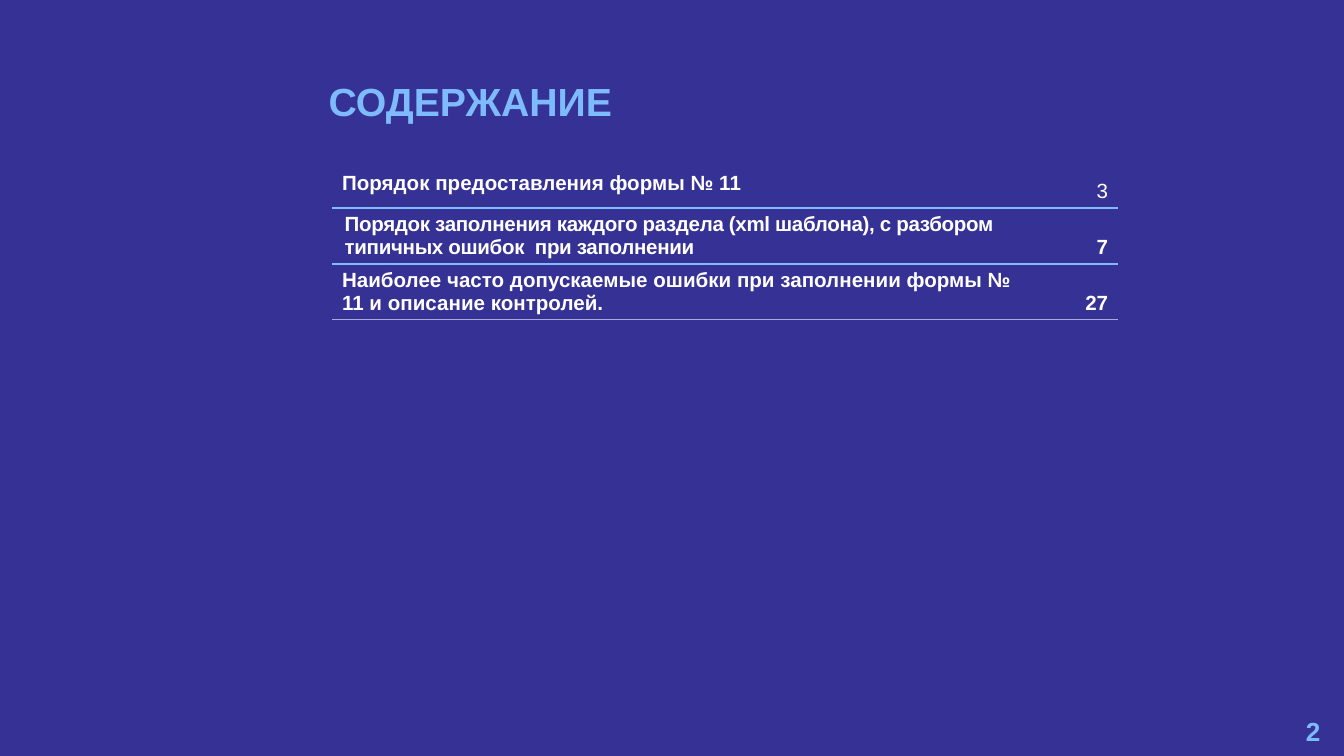
from lxml.etree import SubElement
from pptx import Presentation
from pptx.dml.color import RGBColor
from pptx.enum.text import MSO_ANCHOR, MSO_AUTO_SIZE, PP_ALIGN
from pptx.oxml.ns import qn
from pptx.util import Inches, Pt

COLORS = {"background": "363194", "accent": "7DBBFC", "text": "FFFFFF", "last_rule": "ABA8DA"}
WIDTH = Inches(10)
HEIGHT = WIDTH * 9 // 16
COLUMN, ROW = WIDTH / 100, HEIGHT / 56.25
INSET_X, INSET_Y = Pt(5.4), Pt(2.7)
CONTENTS = [
    ("Порядок предоставления формы № 11", "3"),
    ("Порядок заполнения каждого раздела (xml шаблона), с разбором типичных ошибок  при заполнении", "7"),
    ("Наиболее часто допускаемые ошибки при заполнении формы № 11 и описание контролей.", "27"),
]
COLUMN_SHARES = (0.91, 0.09)
ROW_SHARES = (0.27, 0.365, 0.365)


def grid_box(left, top, width, height):
    return int(left * COLUMN), int(top * ROW), int(width * COLUMN), int(height * ROW)


def set_insets(target):
    target.margin_left = target.margin_right = INSET_X
    target.margin_top = target.margin_bottom = INSET_Y


def add_run(paragraph, text, size, color, bold=True):
    run = paragraph.add_run()
    run.text = text
    run.font.name = "Arial"
    run.font.size = Pt(size)
    run.font.bold = bold
    run.font.color.rgb = RGBColor.from_string(COLORS[color])
    return run


def fill_text_shape(shape, text, size, align, anchor):
    frame = shape.text_frame
    frame.word_wrap = True
    frame.auto_size = MSO_AUTO_SIZE.NONE
    frame.vertical_anchor = anchor
    set_insets(frame)
    paragraph = frame.paragraphs[0]
    paragraph.alignment = align
    add_run(paragraph, text, size, "accent")
    return paragraph


def place_title(slide, box):
    title = slide.shapes.title
    title.left, title.top, title.width, title.height = box
    paragraph = fill_text_shape(title, "СОДЕРЖАНИЕ", 21, PP_ALIGN.LEFT, MSO_ANCHOR.TOP)
    paragraph.line_spacing = 0.9


def place_page_number(slide, box):
    shape = slide.shapes.add_textbox(*box)
    fill_text_shape(shape, "2", 14, PP_ALIGN.RIGHT, MSO_ANCHOR.MIDDLE)


def set_borders(cell, rules):
    properties = cell._tc.get_or_add_tcPr()
    for position, side in enumerate(("lnL", "lnR", "lnT", "lnB")):
        color, width = rules.get(side, (None, 0))
        line = properties.makeelement(qn(f"a:{side}"), {"w": str(Pt(width))})
        properties.insert(position, line)
        if color:
            fill = SubElement(line, qn("a:solidFill"))
            SubElement(fill, qn("a:srgbClr"), val=COLORS[color])
        else:
            SubElement(line, qn("a:noFill"))


def place_contents(slide, box):
    table = slide.shapes.add_table(len(CONTENTS), 2, *box).table
    table.first_row = table.horz_banding = False
    for column, share in zip(table.columns, COLUMN_SHARES):
        column.width = int(box[2] * share)
    for index, entry in enumerate(CONTENTS):
        table.rows[index].height = int(box[3] * ROW_SHARES[index])
        is_last = index == len(CONTENTS) - 1
        rules = {"lnB": ("last_rule", 0.5) if is_last else ("accent", 1)}
        if index > 0:
            rules["lnT"] = ("accent", 1)
        for position, text in enumerate(entry):
            cell = table.cell(index, position)
            cell.fill.background()
            set_insets(cell)
            is_page = position == 1
            cell.vertical_anchor = MSO_ANCHOR.BOTTOM if is_page else MSO_ANCHOR.TOP
            paragraph = cell.text_frame.paragraphs[0]
            paragraph.alignment = PP_ALIGN.RIGHT if is_page else PP_ALIGN.LEFT
            run = add_run(paragraph, text, 11, "text", bold=text != "3")
            if index == 1 and not is_page:
                paragraph._p.get_or_add_pPr().set("marL", str(Inches(0.02)))
                run.font._element.set("spc", "-20")
            set_borders(cell, rules)


def main():
    presentation = Presentation()
    presentation.slide_width, presentation.slide_height = WIDTH, HEIGHT
    slide = presentation.slides.add_slide(presentation.slide_layouts[5])
    background = slide.background.fill
    background.solid()
    background.fore_color.rgb = RGBColor.from_string(COLORS["background"])
    place_title(slide, grid_box(23.7, 5.8, 26.3, 4.9))
    place_page_number(slide, grid_box(76.5, 52.9, 22.5, 3))
    place_contents(slide, grid_box(24.7, 12.4, 58.5, 11.4))
    presentation.save("out.pptx")


if __name__ == "__main__":
    main()
